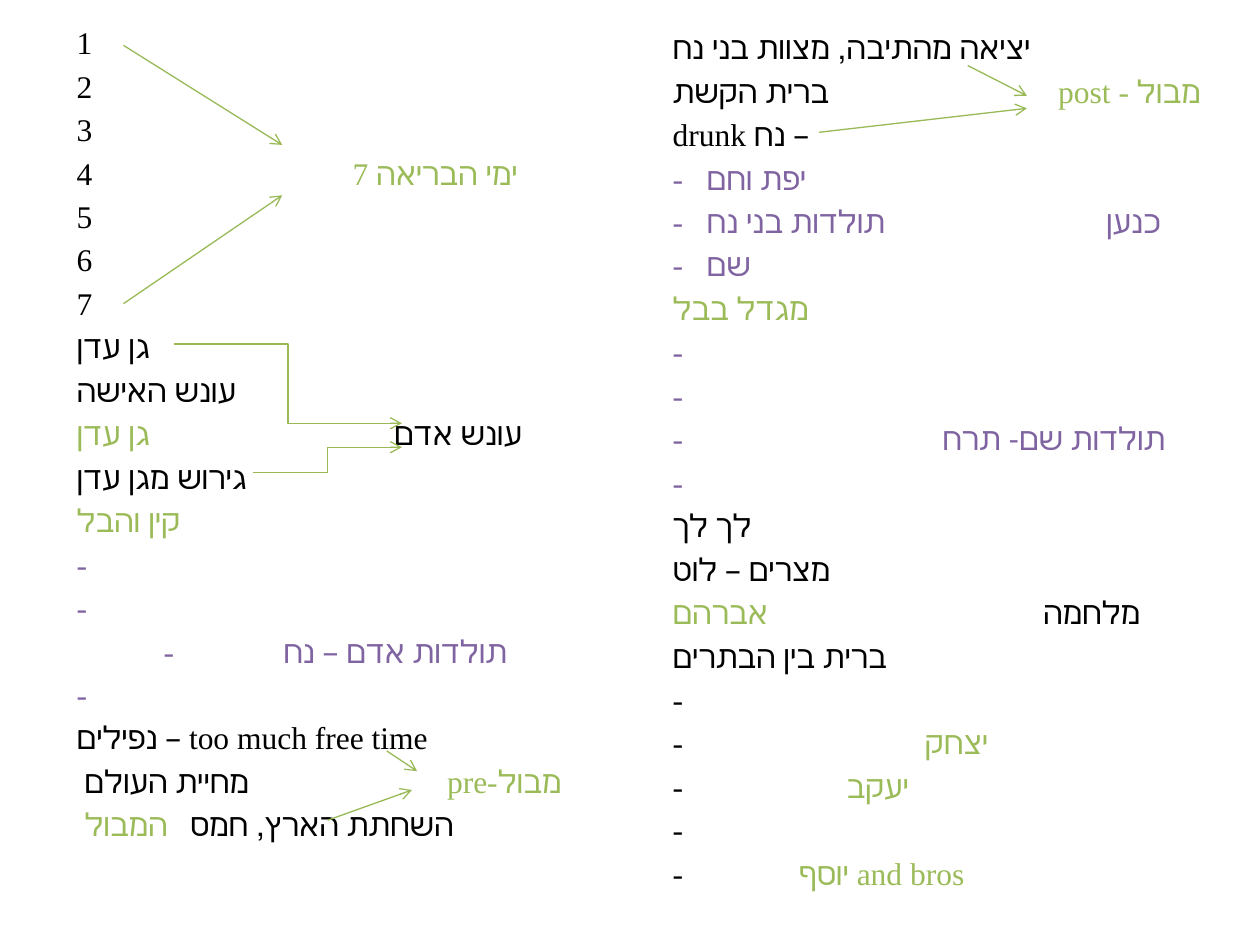
from lxml.etree import SubElement
from pptx import Presentation
from pptx.dml.color import RGBColor
from pptx.enum.shapes import MSO_CONNECTOR as CONN
from pptx.oxml.ns import qn
from pptx.util import Inches, Pt

BLACK = RGBColor(0x00, 0x00, 0x00)
GREEN = RGBColor(0x9B, 0xBB, 0x59)
PURPLE = RGBColor(0x80, 0x64, 0xA2)
ARROW = RGBColor(0x98, 0xB9, 0x55)

DASH = ([], ("-", PURPLE))

CREATION_TO_FLOOD = [
    *[([], (day, BLACK)) for day in "123"],
    ([2.19], ("4\t", BLACK), ("7 ימי הבריאה", GREEN)),
    *[([], (day, BLACK)) for day in "567"],
    ([], ("גן עדן", BLACK)),
    ([], ("עונש האישה", BLACK)),
    ([2.52], ("גן עדן", GREEN), ("\tעונש אדם", BLACK)),
    ([], ("גירוש מגן עדן", BLACK)),
    ([], ("קין והבל", GREEN)),
    DASH,
    DASH,
    ([0.69, 1.64], ("\t-\tתולדות אדם – נח", PURPLE)),
    DASH,
    ([], ("נפילים – too much free time", BLACK)),
    ([2.94], (" מחיית העולם\t", BLACK), ("pre-מבול", GREEN)),
    ([0.9], (" המבול", GREEN), ("\tהשחתת הארץ, חמס", BLACK)),
]

FLOOD_TO_JOSEPH = [
    ([], ("יציאה מהתיבה, מצוות בני נח", BLACK)),
    ([3.06], ("ברית הקשת\t", BLACK), ("post - מבול", GREEN)),
    ([], ("drunk נח –", BLACK)),
    ([0.27], ("-\tיפת וחם", PURPLE)),
    ([0.27, 3.44], ("-\tתולדות בני נח\tכנען", PURPLE)),
    ([0.27], ("-\tשם", PURPLE)),
    ([], ("מגדל בבל", GREEN)),
    DASH,
    DASH,
    ([2.14], ("-\tתולדות שם- תרח", PURPLE)),
    DASH,
    ([], ("לך לך", BLACK)),
    ([], ("מצרים – לוט", BLACK)),
    ([2.94], ("אברהם", GREEN), ("\tמלחמה", BLACK)),
    ([], ("ברית בין הבתרים", BLACK)),
    ([], ("-", BLACK)),
    ([2], ("-\t", BLACK), ("יצחק", GREEN)),
    ([1.38], ("-\t", BLACK), ("יעקב", GREEN)),
    ([], ("-", BLACK)),
    ([1], ("-\t", BLACK), ("יוסף and bros", GREEN)),
]

STRAIGHT_ARROWS = [
    (0.98, 0.36, 2.24, 1.15),
    (0.98, 2.41, 2.24, 1.55),
    (3.07, 5.96, 3.31, 6.12),
    (2.6, 6.51, 3.27, 6.27),
    (7.68, 0.52, 8.15, 0.76),
    (6.5, 1.05, 8.15, 0.86),
]
BENT_ARROWS = [
    (1.38, 2.73, 3.19, 3.36),
    (2.01, 3.75, 3.19, 3.55),
]


class Outline:
    font = "Times New Roman"
    size = Pt(18)
    spacing = 1.15
    weight = Pt(0.75)

    def __init__(self, slide):
        self.slide = slide

    def column(self, box, rows):
        tf = self.slide.shapes.add_textbox(*map(Inches, box)).text_frame
        tf.word_wrap = True
        for i, (tabs, *runs) in enumerate(rows):
            p = tf.add_paragraph() if i else tf.paragraphs[0]
            p.line_spacing = self.spacing
            self.tab_stops(p, tabs)
            for text, color in runs:
                self.run(p, text, color)

    def tab_stops(self, p, tabs):
        if tabs:
            tab_list = SubElement(p._p.get_or_add_pPr(), qn("a:tabLst"))
            for pos in tabs:
                SubElement(tab_list, qn("a:tab"), pos=str(Inches(pos)), algn="l")

    def run(self, p, text, color):
        r = p.add_run()
        r.text = text
        r.font.name = self.font
        r.font.size = self.size
        r.font.color.rgb = color

    def arrow(self, ends, kind=CONN.STRAIGHT):
        sp = self.slide.shapes.add_connector(kind, *map(Inches, ends))
        sp.line.color.rgb = ARROW
        sp.line.width = self.weight
        SubElement(sp.line._get_or_add_ln(), qn("a:tailEnd"), type="arrow")
        SubElement(sp._element.spPr, qn("a:effectLst"))


def main():
    prs = Presentation()
    prs.slide_width, prs.slide_height = Inches(10), Inches(7.5)
    s = Outline(prs.slides.add_slide(prs.slide_layouts[6]))
    s.column((0.51, 0.09, 4.42, 7.21), CREATION_TO_FLOOD)
    s.column((5.24, 0.13, 4.42, 7.17), FLOOD_TO_JOSEPH)
    for ends in STRAIGHT_ARROWS:
        s.arrow(ends)
    for ends in BENT_ARROWS:
        s.arrow(ends, CONN.ELBOW)
    prs.save("out.pptx")


if __name__ == "__main__":
    main()
